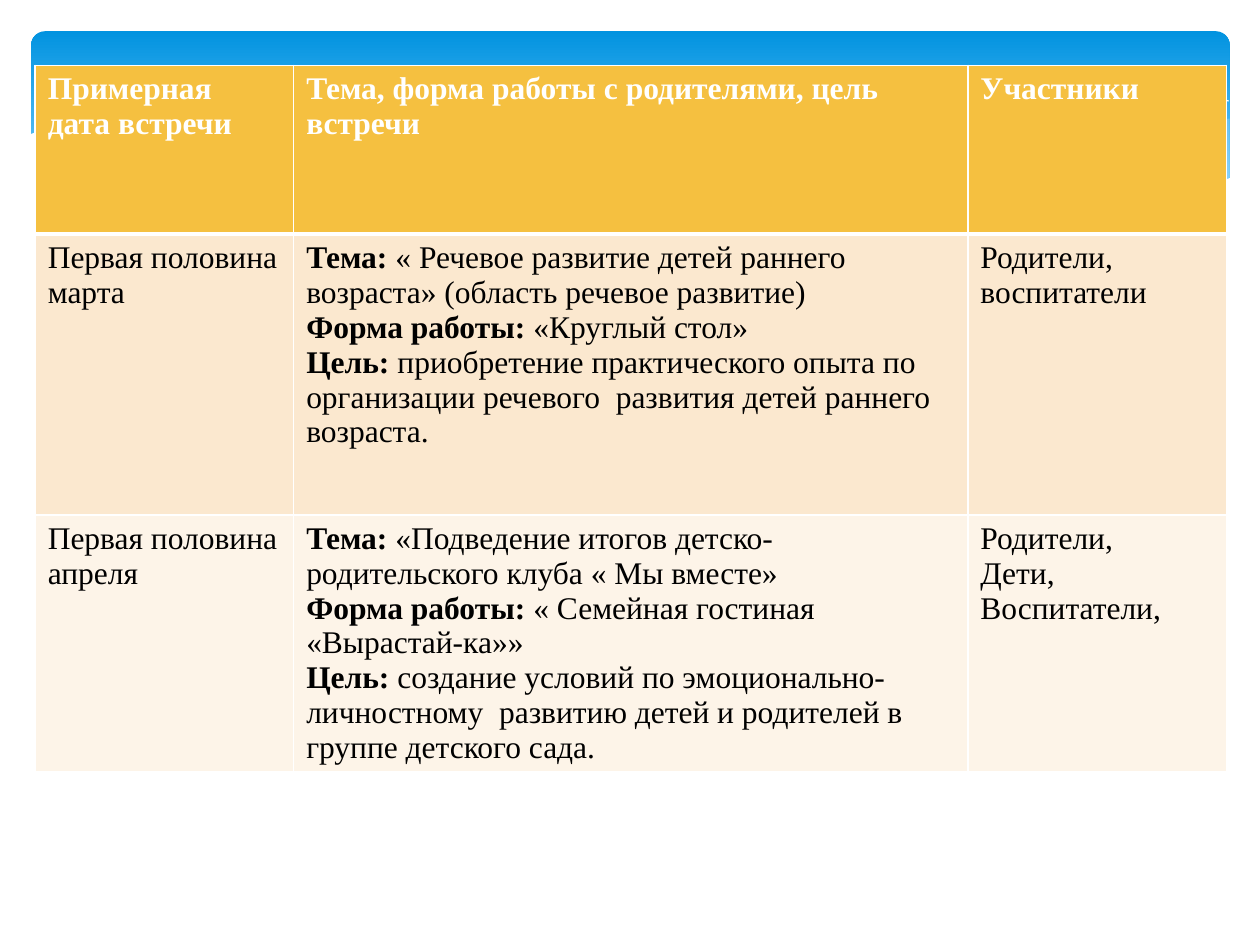
from lxml.etree import SubElement
from pptx import Presentation
from pptx.dml.color import RGBColor
from pptx.enum.shapes import MSO_SHAPE
from pptx.oxml.ns import qn
from pptx.util import Cm, Pt

WHITE, BLACK, PALE_BLUE = "FFFFFF", "000000", "C6E7FC"
HEADER_FILL, ROW_FILLS = "F5C040", ["FBE8CF", "FDF4E8"]
COLUMN_WIDTHS = [5.21, 13.59, 5.21]
ROW_HEIGHTS = [3.4, 5.66, 5.16]

RIGHT_WAVE = [(2479, 239), (2375, 257), (2225, 290), (2045, 333), (1852, 373), (1679, 406),
              (1826, 424), (1984, 437), (2121, 437), (2258, 422), (2375, 396), (2479, 358)]
MIDDLE_WAVE = [(2268, 424), (2050, 391), (1793, 340), (1598, 295), (1410, 254), (1242, 226),
               (1067, 208), (917, 203), (726, 218), (919, 246), (1140, 295), (1438, 363),
               (1651, 401), (1834, 427), (2050, 439)]
LONG_LINE = [(785, 229), (897, 213), (1057, 206), (1242, 213), (1412, 231), (1615, 262),
             (1847, 305), (2111, 368), (2304, 422)]
SHORT_LINE = [(1557, 384), (1707, 343), (1900, 297), (2123, 251), (2311, 218), (2477, 203)]
WHITE_WAVE = [(2482, 358), (2362, 399), (2223, 424), (2055, 434), (1844, 424), (1590, 389),
              (1344, 338), (1135, 290), (927, 244), (742, 216), (584, 201), (450, 198),
              (302, 208), (193, 226), (117, 249), (58, 272), (58, 569), (2482, 569)]

HEADERS = ["Примерная дата встречи", "Тема, форма работы с родителями, цель встречи", "Участники"]
MEETINGS = [
    [[("", "Первая половина марта")],
     [("Тема: ", "« Речевое развитие детей раннего возраста» (область речевое развитие)"),
      ("Форма работы:", " «Круглый стол»"),
      ("Цель: ", "приобретение практического опыта по  организации речевого  развития "
                 "детей раннего возраста.")],
     [("", "Родители, воспитатели")]],
    [[("", "Первая половина апреля")],
     [("Тема: ", "«Подведение итогов детско-родительского клуба « Мы вместе»"),
      ("Форма работы: ", "« Семейная гостиная «Вырастай-ка»»"),
      ("Цель: ", "создание условий по эмоционально-личностному  развитию детей и родителей "
                 "в группе детского сада.")],
     [("", "Родители,"), ("", "Дети,"), ("", "Воспитатели,")]],
]


def color(value):
    """Turn a hex string into a colour."""
    return RGBColor.from_string(value)


def paint(fill, value, opacity=100):
    """Give a solid fill, see-through if opacity is below 100."""
    fill.solid()
    fill.fore_color.rgb = color(value)
    if opacity < 100:
        tone = fill._xPr.find(qn("a:solidFill"))[0]
        SubElement(tone, qn("a:alpha"), val=str(opacity * 1000))


def add_banner(page):
    """Add the rounded blue banner."""
    banner = page.shapes.add_shape(MSO_SHAPE.ROUNDED_RECTANGLE,
                                   Cm(0.63), Cm(0.63), Cm(24.16), Cm(3.96))
    banner.adjustments[0] = 0.07
    banner.shadow.inherit = False
    banner.line.fill.background()
    banner.fill.gradient()
    banner.fill.gradient_angle = 270
    for stop, position, tone in zip(banner.fill.gradient_stops, (0, 0.9), ("0293E0", "83D3FE")):
        stop.position = position
        stop.color.rgb = color(tone)


def add_outline(page, points, fill=None, opacity=100):
    """Add a filled wave, or an open white line when there is no fill."""
    builder = page.shapes.build_freeform(*points[0], scale=Cm(0.01))
    builder.add_line_segments(points[1:], close=fill is not None)
    outline = builder.convert_to_shape()
    outline.shadow.inherit = False
    if fill:
        paint(outline.fill, fill, opacity)
        outline.line.fill.background()
    else:
        outline.fill.background()
        outline.line.color.rgb = color(WHITE)
        outline.line.width = Pt(0)


def add_span(para, text, bold=False, tone=BLACK):
    """Add a run of table text."""
    span = para.add_run()
    span.text = text
    span.font.name = "Times New Roman"
    span.font.size = Pt(18)
    span.font.bold = bold
    span.font.color.rgb = color(tone)


def add_borders(cell, top=1, bottom=1):
    """Draw white borders round a cell, with widths in points."""
    properties = cell._tc.get_or_add_tcPr()
    for side, width in (("L", 1), ("R", 1), ("T", top), ("B", bottom)):
        line = SubElement(properties, qn(f"a:ln{side}"), w=str(Pt(width)))
        SubElement(SubElement(line, qn("a:solidFill")), qn("a:srgbClr"), val=WHITE)


def fill_cell(cell, paragraphs, fill, tone=BLACK, **borders):
    """Write the bold label and plain text of each paragraph in a cell."""
    add_borders(cell, **borders)
    paint(cell.fill, fill)
    frame = cell.text_frame
    for index, (label, text) in enumerate(paragraphs):
        para = frame.add_paragraph() if index else frame.paragraphs[0]
        if label:
            add_span(para, label, bold=True, tone=tone)
        if text:
            add_span(para, text, tone=tone)


def add_meetings(page):
    """Add the table of meetings."""
    table = page.shapes.add_table(len(ROW_HEIGHTS), len(COLUMN_WIDTHS), Cm(0.71), Cm(1.32),
                                  Cm(sum(COLUMN_WIDTHS)), Cm(sum(ROW_HEIGHTS))).table
    for column, width in zip(table.columns, COLUMN_WIDTHS):
        column.width = Cm(width)
    for row, height in zip(table.rows, ROW_HEIGHTS):
        row.height = Cm(height)
    for index, header in enumerate(HEADERS):
        fill_cell(table.cell(0, index), [(header, "")], HEADER_FILL, WHITE, bottom=3)
    for number, (meeting, fill) in enumerate(zip(MEETINGS, ROW_FILLS), start=1):
        for index, paragraphs in enumerate(meeting):
            fill_cell(table.cell(number, index), paragraphs, fill, top=3 if number == 1 else 1)


def main():
    """Build and save the slide."""
    deck = Presentation()
    deck.slide_width, deck.slide_height = Cm(25.4), Cm(19.05)
    page = deck.slides.add_slide(deck.slide_layouts[6])
    add_banner(page)
    add_outline(page, RIGHT_WAVE, PALE_BLUE, opacity=29)
    add_outline(page, MIDDLE_WAVE, PALE_BLUE, opacity=40)
    add_outline(page, LONG_LINE)
    add_outline(page, SHORT_LINE)
    add_outline(page, WHITE_WAVE, WHITE)
    add_meetings(page)
    deck.save("out.pptx")


if __name__ == "__main__":
    main()
